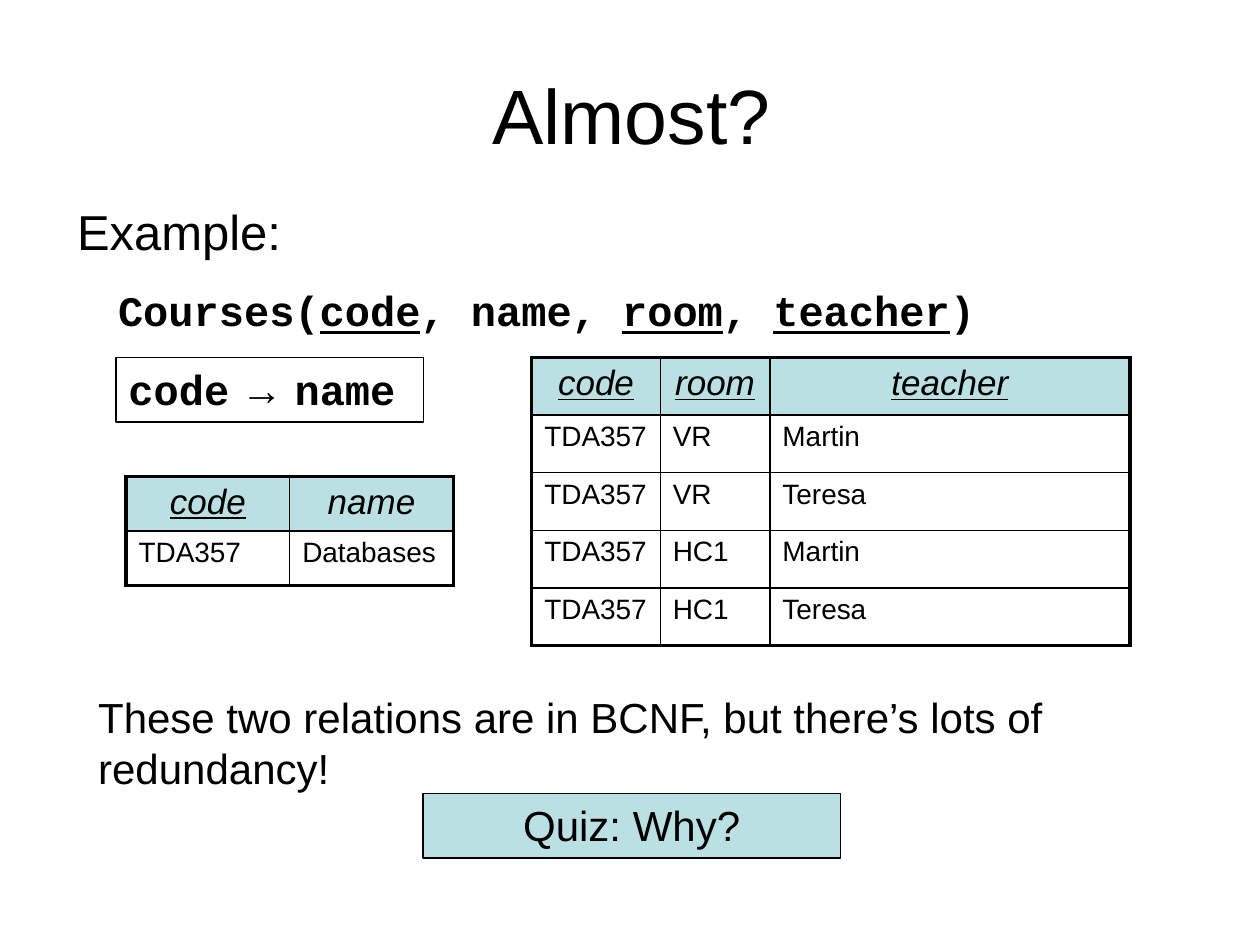
from lxml.etree import SubElement
from pptx import Presentation
from pptx.dml.color import RGBColor
from pptx.enum.shapes import MSO_SHAPE
from pptx.enum.text import MSO_ANCHOR, PP_ALIGN
from pptx.oxml.ns import qn
from pptx.util import Cm, Pt

BLACK = RGBColor(0x00, 0x00, 0x00)
TEAL = RGBColor(0xBB, 0xE0, 0xE3)
MONO = "Courier New"


def add_text(p, text, size=24, font="Arial", bold=False, italic=False,
             underline=False, align=PP_ALIGN.LEFT):
    p.alignment = align
    r = p.add_run()
    r.text = text
    r.font.size = Pt(size)
    r.font.name = font
    r.font.bold = bold
    r.font.italic = italic
    r.font.underline = underline
    r.font.color.rgb = BLACK


def add_border(cell, side, width):
    ln = SubElement(cell._tc.get_or_add_tcPr(), qn(f"a:ln{side}"), w=str(Pt(width)))
    fill = SubElement(ln, qn("a:solidFill"))
    SubElement(fill, qn("a:srgbClr"), val=str(BLACK))


prs = Presentation()
prs.slide_width, prs.slide_height = Cm(25.4), Cm(19.05)
s = prs.slides.add_slide(prs.slide_layouts[1])

title, body = s.placeholders
for sp, top, height, anchor in [(title, 0.71, 3.18, MSO_ANCHOR.MIDDLE),
                                (body, 3.94, 1.68, MSO_ANCHOR.TOP)]:
    sp.left, sp.top, sp.width, sp.height = Cm(1.3), Cm(top), Cm(22.86), Cm(height)
    sp.text_frame.vertical_anchor = anchor
add_text(title.text_frame.paragraphs[0], "Almost?", size=44, align=PP_ALIGN.CENTER)
p = body.text_frame.paragraphs[0]
add_text(p, "Example:", size=28)
p.space_before = Pt(0)
pPr = p._p.get_or_add_pPr()
pPr.set("marL", str(Cm(0.95)))
pPr.set("indent", str(-Cm(0.95)))
SubElement(pPr, qn("a:buNone"))

sp = s.shapes.add_textbox(Cm(2.13), Cm(5.61), Cm(21.62), Cm(1.28))
sp.text_frame.word_wrap = True
p = sp.text_frame.paragraphs[0]
for text, is_key in [("Courses(", False), ("code", True), (", name, ", False),
                     ("room", True), (", ", False), ("teacher", True), (")", False)]:
    add_text(p, text, font=MONO, bold=True, underline=is_key)

sp = s.shapes.add_textbox(Cm(1.73), Cm(13.82), Cm(21.62), Cm(2.28))
sp.text_frame.word_wrap = True
add_text(sp.text_frame.paragraphs[0],
         "These two relations are in BCNF, but there’s lots of redundancy!")

boxes = []
for left, top, width in [(2.34, 7.21, 6.2), (8.53, 16, 8.41)]:
    sp = s.shapes.add_shape(MSO_SHAPE.RECTANGLE, Cm(left), Cm(top), Cm(width), Cm(1.3))
    sp.shadow.inherit = False
    sp.fill.background()
    sp.line.color.rgb = BLACK
    sp.line.width = Pt(0.75)
    sp.text_frame.word_wrap = True
    sp.text_frame.vertical_anchor = MSO_ANCHOR.TOP
    boxes.append(sp)
dependency, quiz = boxes
p = dependency.text_frame.paragraphs[0]
add_text(p, "code", font=MONO, bold=True)
add_text(p, " → ")
add_text(p, "name", font=MONO, bold=True)
quiz.fill.solid()
quiz.fill.fore_color.rgb = TEAL
add_text(quiz.text_frame.paragraphs[0], "Quiz: Why?", align=PP_ALIGN.CENTER)

relations = [
    (10.72, 7.21, 1.16, [2.59, 2.21, 7.26], ["code", "room", "teacher"],
     [["code", "room", "teacher"],
      ["TDA357", "VR", "Martin"],
      ["TDA357", "VR", "Teresa"],
      ["TDA357", "HC1", "Martin"],
      ["TDA357", "HC1", "Teresa"]]),
    (2.54, 9.6, 1.1, [3.3, 3.3], ["code"],
     [["code", "name"],
      ["TDA357", "Databases"]]),
]
for left, top, row_height, widths, keys, rows in relations:
    n_rows, n_cols = len(rows), len(widths)
    tbl = s.shapes.add_table(n_rows, n_cols, Cm(left), Cm(top),
                             Cm(sum(widths)), Cm(row_height * n_rows)).table
    tbl.first_row = tbl.horz_banding = False
    for col, width in zip(tbl.columns, widths):
        col.width = Cm(width)
    for i, row in enumerate(rows):
        tbl.rows[i].height = Cm(row_height)
        for j, text in enumerate(row):
            cell = tbl.cell(i, j)
            for side, is_outer in [("L", j == 0), ("R", j == n_cols - 1),
                                   ("T", i == 0), ("B", i == n_rows - 1)]:
                add_border(cell, side, 2.25 if is_outer else 1)
            p = cell.text_frame.paragraphs[0]
            if i == 0:
                cell.fill.solid()
                cell.fill.fore_color.rgb = TEAL
                add_text(p, text, size=20, italic=True, underline=text in keys,
                         align=PP_ALIGN.CENTER)
            else:
                cell.fill.background()
                add_text(p, text, size=16)

prs.save("out.pptx")
